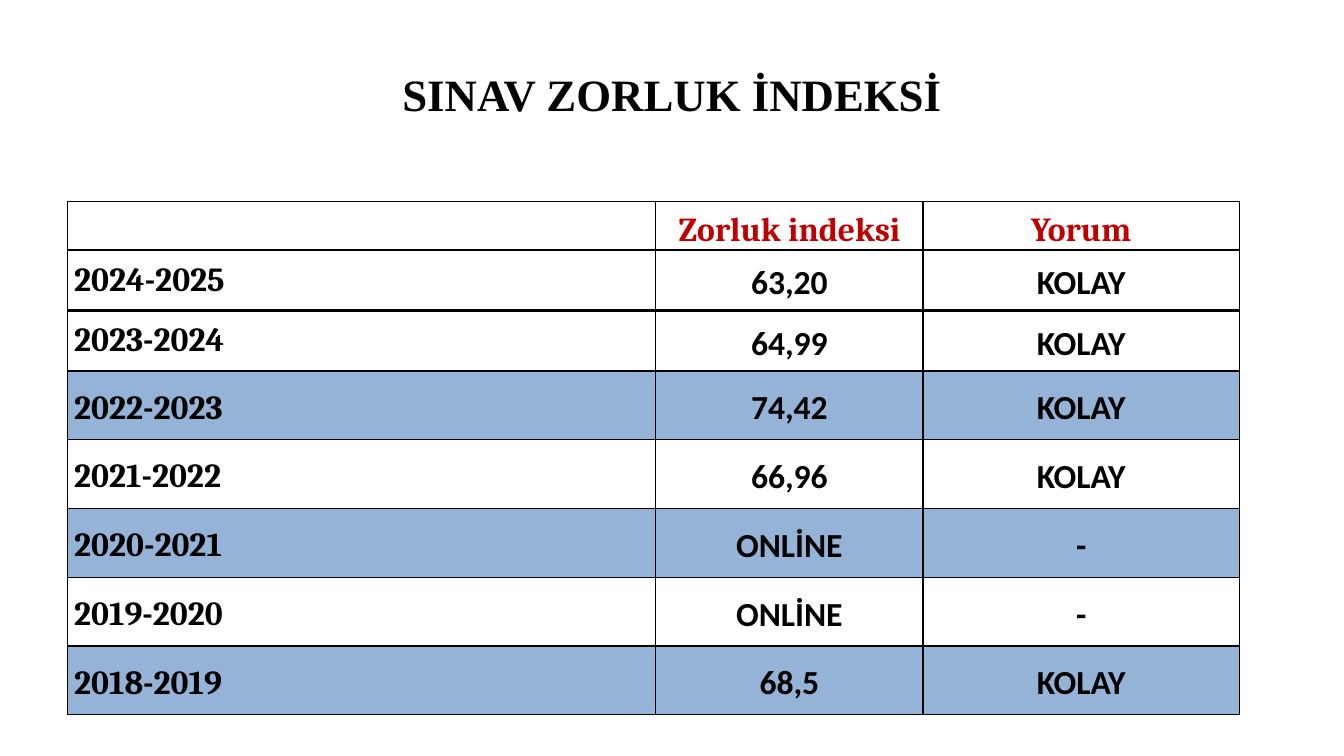
from dataclasses import dataclass

from lxml.etree import SubElement as Sub
from pptx import Presentation
from pptx.dml.color import RGBColor
from pptx.enum.text import MSO_ANCHOR as Anchor, PP_ALIGN as Align
from pptx.oxml.ns import qn
from pptx.util import Pt

BLACK = RGBColor(0x00, 0x00, 0x00)
WHITE = RGBColor(0xFF, 0xFF, 0xFF)
RED = RGBColor(0xC0, 0x00, 0x00)
BLUE = RGBColor(0x95, 0xB3, 0xD7)

THIN, THICK = 1, 2.25
WIDTHS = (420.5, 190.8, 226.1)


@dataclass
class Row:
    texts: tuple[str, str, str]
    height: float = 49.1
    fill: RGBColor = WHITE
    top: float = THIN
    base: float = THIN
    lead: float = 1.15


ROWS = (
    Row(("", "Zorluk indeksi", "Yorum"), 34.6, base=THICK),
    Row(("2024-2025", "63,20", "KOLAY"), 43.2, top=THICK, base=THICK, lead=1),
    Row(("2023-2024", "64,99", "KOLAY"), 43.2, top=THICK, lead=1),
    Row(("2022-2023", "74,42", "KOLAY"), fill=BLUE),
    Row(("2021-2022", "66,96", "KOLAY")),
    Row(("2020-2021", "ONLİNE", "-"), fill=BLUE),
    Row(("2019-2020", "ONLİNE", "-")),
    Row(("2018-2019", "68,5", "KOLAY"), fill=BLUE),
)


def apply(thing, form: dict) -> None:
    for name, value in form.items():
        setattr(thing, name, value)


def write(frame, text: str, face: str, size: float, color: RGBColor,
          align: Align, lead: float = 1) -> None:
    para = frame.paragraphs[0]
    apply(para, {"alignment": align, "line_spacing": lead})
    run = para.add_run()
    run.text = text
    apply(run.font, {"name": face, "size": Pt(size), "bold": True})
    run.font.color.rgb = color


def border(cell, row: Row) -> None:
    props = cell._tc.get_or_add_tcPr()
    sides = {"a:lnL": THIN, "a:lnR": THIN, "a:lnT": row.top, "a:lnB": row.base}
    for tag, width in sides.items():
        line = Sub(props, qn(tag), w=str(int(Pt(width))))
        Sub(Sub(line, qn("a:solidFill")), qn("a:srgbClr"), val=str(BLACK))


def style(cell, row: Row, text: str, head: bool, first: bool) -> None:
    border(cell, row)
    cell.fill.solid()
    cell.fill.fore_color.rgb = row.fill
    apply(cell, {
        "margin_left": Pt(5), "margin_right": Pt(5),
        "margin_top": Pt(0), "margin_bottom": Pt(0),
        "vertical_anchor": Anchor.BOTTOM if head else Anchor.MIDDLE,
    })
    if text:
        write(cell.text_frame, text,
              "Cambria" if head or first else "Calibri", 24,
              RED if head else BLACK,
              Align.LEFT if first else Align.CENTER,
              row.lead if first else 1.15)


def add_title(slide) -> None:
    box = slide.shapes.add_textbox(Pt(48), Pt(21.6), Pt(864), Pt(90))
    frame = box.text_frame
    apply(frame, {"word_wrap": True, "vertical_anchor": Anchor.MIDDLE})
    write(frame, "SINAV ZORLUK İNDEKSİ", "Times New Roman", 32, BLACK,
          Align.CENTER)


def add_grid(slide) -> None:
    grid = slide.shapes.add_table(
        len(ROWS), len(WIDTHS), Pt(48), Pt(144),
        Pt(sum(WIDTHS)), Pt(sum(row.height for row in ROWS))).table
    apply(grid, {"first_row": False, "horz_banding": False})
    for col, width in zip(grid.columns, WIDTHS):
        col.width = Pt(width)
    for y, row in enumerate(ROWS):
        grid.rows[y].height = Pt(row.height)
        for x, text in enumerate(row.texts):
            style(grid.cell(y, x), row, text, y == 0, x == 0)


def main() -> None:
    deck = Presentation()
    apply(deck, {"slide_width": Pt(960), "slide_height": Pt(540)})
    slide = deck.slides.add_slide(deck.slide_layouts[6])
    add_title(slide)
    add_grid(slide)
    deck.save("out.pptx")


if __name__ == "__main__":
    main()
